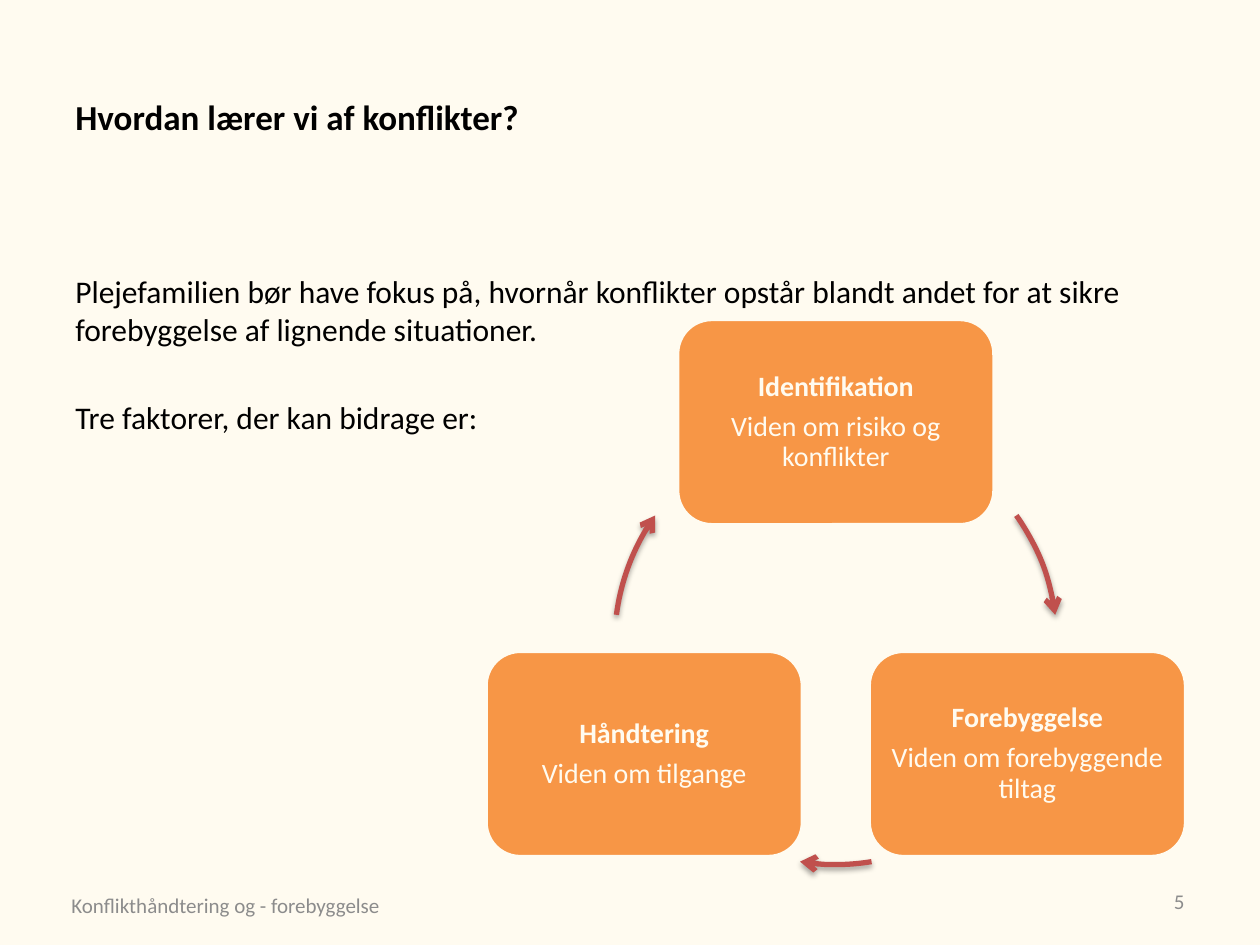
from dataclasses import dataclass
from math import cos, radians, sin

from lxml.etree import SubElement as Sub
from pptx import Presentation as Deck
from pptx.dml.color import RGBColor as Rgb
from pptx.enum.shapes import MSO_SHAPE as Kind
from pptx.enum.text import MSO_ANCHOR as Anchor, PP_ALIGN as Align
from pptx.oxml.ns import qn
from pptx.util import Cm, Pt


@dataclass(frozen=True)
class Theme:
    font: str = "Calibri"
    paper: str = "FFFBF0"
    ink: str = "000000"
    grey: str = "8C8C8C"
    card: str = "F79646"
    arrow: str = "C0504D"
    title: float = 20
    body: float = 18
    label: float = 16
    foot: float = 12


def write(par, text, font, size, color, bold=False, align=Align.LEFT,
          before=0, after=0, lead=1.0):
    par.alignment = align
    par.space_before, par.space_after = Pt(before), Pt(after)
    par.line_spacing = lead
    run = par.add_run()
    run.text = text
    face = run.font
    face.name, face.size, face.bold = font, Pt(size), bold
    face.color.rgb = Rgb.from_string(color)


class Page:
    def __init__(self, slide, theme):
        self.slide, self.theme = slide, theme
        fill = slide.background.fill
        fill.solid()
        fill.fore_color.rgb = Rgb.from_string(theme.paper)

    def fill(self, frame, lines, **form):
        """Write (text, extra format) pairs, one paragraph each."""
        for i, (text, extra) in enumerate(lines):
            par = frame.add_paragraph() if i else frame.paragraphs[0]
            write(par, text, self.theme.font, **{**form, **extra})

    def text(self, box, lines, anchor=Anchor.MIDDLE, top=0.13, **form):
        frame = self.slide.shapes.add_textbox(*map(Cm, box)).text_frame
        frame.word_wrap = True
        frame.vertical_anchor = anchor
        frame.margin_top = Cm(top)
        self.fill(frame, lines, **form)

    def card(self, x, y, wide, high, head, note):
        """Rounded card centred on x, y."""
        look = self.theme
        box = (x - wide / 2, y - high / 2, wide, high)
        shape = self.slide.shapes.add_shape(Kind.ROUNDED_RECTANGLE, *map(Cm, box))
        shape.shadow.inherit = False
        shape.fill.solid()
        shape.fill.fore_color.rgb = Rgb.from_string(look.card)
        shape.line.color.rgb = Rgb.from_string(look.paper)
        shape.line.width = Pt(2)
        frame = shape.text_frame
        frame.word_wrap = True
        frame.vertical_anchor = Anchor.MIDDLE
        frame.margin_left = frame.margin_right = Cm(0.18)
        frame.margin_top = frame.margin_bottom = Cm(0.18)
        self.fill(frame, [(head, {"bold": True}), (note, {})], size=look.label,
                  color=look.paper, align=Align.CENTER, after=5.6, lead=0.9)

    def arc(self, x, y, reach, start, end):
        """Clockwise arrow on a circle, angles in degrees from the right."""
        box = (x - reach, y - reach, 2 * reach, 2 * reach)
        shape = self.slide.shapes.add_shape(Kind.ARC, *map(Cm, box))
        # Angles are stored in 1/60000 degree, adjustments in 1/100000
        shape.adjustments[0] = start * 0.6
        shape.adjustments[1] = end * 0.6
        shape.fill.background()
        shape.line.color.rgb = Rgb.from_string(self.theme.arrow)
        shape.line.width = Pt(3)
        Sub(shape.line._get_or_add_ln(), qn("a:tailEnd"), type="arrow")
        # Soft shadow below the stroke
        shape.shadow.inherit = False
        glow = Sub(shape._element.spPr.find(qn("a:effectLst")), qn("a:outerShdw"),
                   blurRad=str(Pt(3.1)), dist=str(Pt(1.8)), dir="5400000",
                   rotWithShape="0")
        tone = Sub(glow, qn("a:srgbClr"), val=self.theme.ink)
        Sub(tone, qn("a:alpha"), val="35000")


def main():
    deck = Deck()
    deck.slide_width, deck.slide_height = Cm(25.4), Cm(19.05)
    look = Theme()
    page = Page(deck.slides.add_slide(deck.slide_layouts[6]), look)

    # Title and body
    page.text((1.27, 0.76, 22.86, 3.18),
              [("Hvordan lærer vi af konflikter?", {})],
              size=look.title, color=look.ink, bold=True)
    page.text((1.27, 4.45, 22.86, 12.57),
              [("Plejefamilien bør have fokus på, hvornår konflikter opstår "
                "blandt andet for at sikre forebyggelse af lignende situationer.", {}),
               ("Tre faktorer, der kan bidrage er:", {"before": 28.5})],
              anchor=Anchor.TOP, top=1.04, size=look.body, color=look.ink)

    # Cycle: cards a third of a turn apart, arrows on the same circle
    x, y, reach = 16.85, 12.97, 4.46
    cards = [("Identifikation", "Viden om risiko og konflikter"),
             ("Forebyggelse", "Viden om forebyggende tiltag"),
             ("Håndtering", "Viden om tilgange")]
    arcs = [(324.7, 352.6), (80.7, 99.3), (187.4, 215.3)]
    for i, (card, arc) in enumerate(zip(cards, arcs)):
        turn = radians(120 * i - 90)
        page.card(x + reach * cos(turn), y + reach * sin(turn), 6.38, 4.14, *card)
        page.arc(x, y, reach, *arc)

    # Footer and page number
    page.text((1.19, 17.73, 8.05, 1.02),
              [("Konflikthåndtering og - forebyggelse", {})],
              size=look.foot, color=look.grey)
    page.text((18.21, 17.65, 5.92, 1.02), [("5", {})],
              size=look.foot, color=look.grey, align=Align.RIGHT)

    deck.save("out.pptx")


if __name__ == "__main__":
    main()
